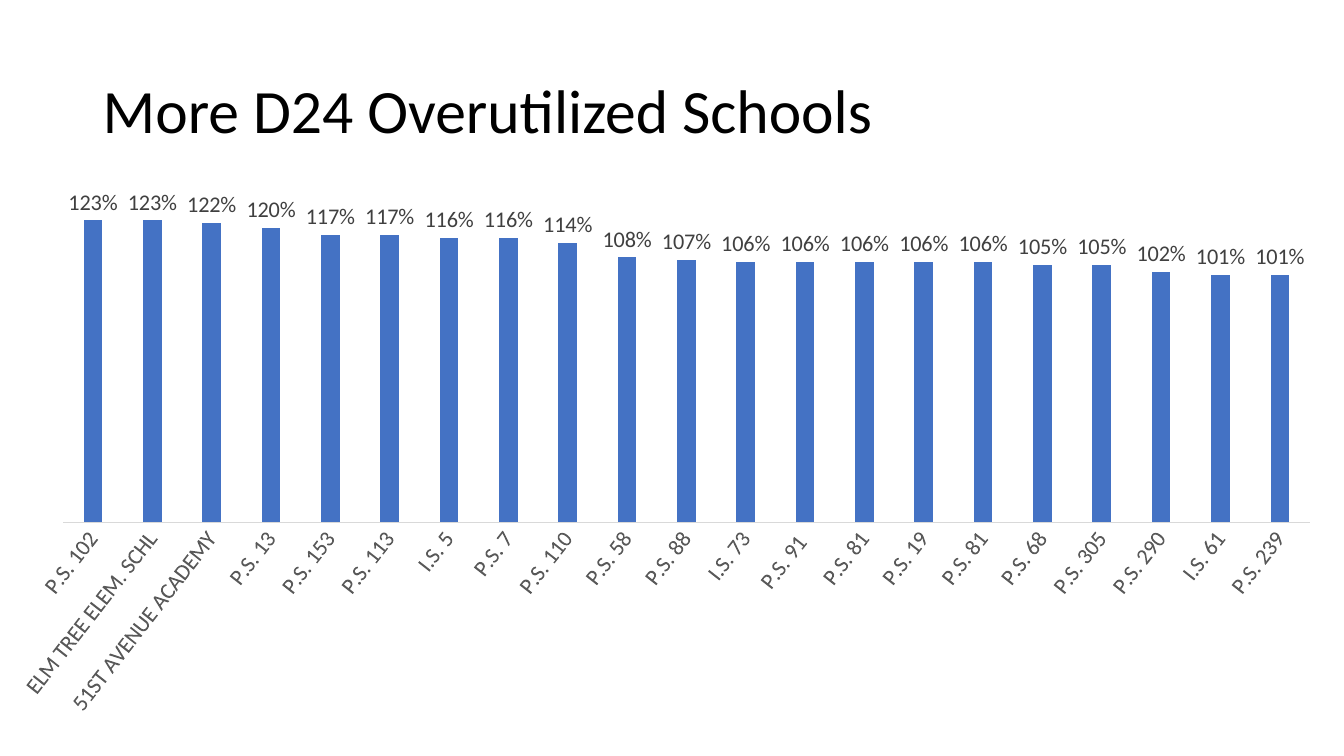
from lxml import etree
from pptx import Presentation
from pptx import util as u
from pptx.chart import data as chart_data
from pptx.dml import color
from pptx.enum import chart as ch, text
from pptx.oxml import ns

BLACK = color.RGBColor(0x00, 0x00, 0x00)
BLUE = color.RGBColor(0x44, 0x72, 0xC4)
LABEL_GRAY = color.RGBColor(0x40, 0x40, 0x40)
AXIS_GRAY = color.RGBColor(0x59, 0x59, 0x59)
LINE_GRAY = color.RGBColor(0xD9, 0xD9, 0xD9)

SCHOOLS = [
    ("P.S. 102", 1.23), ("ELM TREE ELEM. SCHL", 1.23),
    ("51ST AVENUE ACADEMY", 1.22), ("P.S. 13", 1.2), ("P.S. 153", 1.17),
    ("P.S. 113", 1.17), ("I.S. 5", 1.16), ("P.S. 7", 1.16),
    ("P.S. 110", 1.14), ("P.S. 58", 1.08), ("P.S. 88", 1.07),
    ("I.S. 73", 1.06), ("P.S. 91 ", 1.06), ("P.S. 81", 1.06),
    ("P.S. 19", 1.06), ("P.S. 81", 1.06), ("P.S. 68", 1.05),
    ("P.S. 305", 1.05), ("P.S. 290", 1.02), ("I.S. 61", 1.01),
    ("P.S. 239", 1.01),
]
PLOT_AREA = {"layoutTarget": "inner", "xMode": "edge", "yMode": "edge",
             "x": 0.028, "y": 0.029, "w": 0.961, "h": 0.601}
LABEL_ANGLE = -52


class SlideBuilder:
    """Holds the font and the current slide, and adds styled elements."""

    def __init__(self, slide, font="Calibri"):
        self.s = slide
        self.font = font

    def apply(self, target, **formats):
        """Set each given format value on the target."""
        for name, value in formats.items():
            setattr(target, name, value)

    def style(self, font, size, rgb):
        """Give a font the slide's typeface, a size and a colour."""
        self.apply(font, name=self.font, size=u.Pt(size))
        font.color.rgb = rgb

    def title(self, words, box):
        """Add a vertically centred title."""
        tf = self.s.shapes.add_textbox(*map(u.Inches, box)).text_frame
        self.apply(tf, word_wrap=True, vertical_anchor=text.MSO_ANCHOR.MIDDLE)
        p = tf.paragraphs[0]
        p.line_spacing = 0.9
        r = p.add_run()
        r.text = words
        self.style(r.font, 44, BLACK)

    def column_chart(self, rows, box):
        """Add a column chart of percentages with labelled bars."""
        data = chart_data.CategoryChartData(number_format="0%")
        data.categories = [name for name, _ in rows]
        data.add_series("Series 1", [value for _, value in rows])
        chart = self.s.shapes.add_chart(
            ch.XL_CHART_TYPE.COLUMN_CLUSTERED, *map(u.Inches, box), data).chart
        self.apply(chart, has_legend=False, has_title=False)
        self.style(chart.font, 10, BLACK)
        self.bars(chart.plots[0])
        self.axes(chart)
        self.plot_layout(chart)

    def bars(self, plot):
        """Colour the bars and label their ends."""
        self.apply(plot, gap_width=219, overlap=-27, vary_by_categories=False,
                   has_data_labels=True)
        fill = plot.series[0].format.fill
        fill.solid()
        fill.fore_color.rgb = BLUE
        labels = plot.data_labels
        self.apply(labels, show_value=True, number_format="0%",
                   number_format_is_linked=False,
                   position=ch.XL_LABEL_POSITION.OUTSIDE_END)
        self.style(labels.font, 16, LABEL_GRAY)

    def axes(self, chart):
        """Slant the school names and hide the value axis."""
        none = ch.XL_TICK_MARK.NONE
        axis = chart.category_axis
        self.apply(axis, major_tick_mark=none, minor_tick_mark=none,
                   has_major_gridlines=False)
        self.style(axis.tick_labels.font, 16, AXIS_GRAY)
        axis.format.line.color.rgb = LINE_GRAY
        axis.format.line.width = u.Pt(0.75)
        body = axis._element.find(f"{ns.qn('c:txPr')}/{ns.qn('a:bodyPr')}")
        body.set("rot", str(LABEL_ANGLE * 60000))
        body.set("vert", "horz")
        self.apply(chart.value_axis, minimum_scale=0, maximum_scale=1.4,
                   has_major_gridlines=False, visible=False)
        self.apply(chart.value_axis.tick_labels, number_format="0%",
                   number_format_is_linked=False)

    def plot_layout(self, chart):
        """Fix the inner plot area inside the chart."""
        plot_area = chart._chartSpace.chart.plotArea
        for old in plot_area.findall(ns.qn("c:layout")):
            plot_area.remove(old)
        layout = etree.Element(ns.qn("c:layout"))
        manual = etree.SubElement(layout, ns.qn("c:manualLayout"))
        for name, value in PLOT_AREA.items():
            etree.SubElement(manual, ns.qn(f"c:{name}")).set("val", str(value))
        plot_area.insert(0, layout)


def main():
    """Build and save the slide."""
    prs = Presentation()
    prs.slide_width, prs.slide_height = u.Inches(13.33), u.Inches(7.5)
    builder = SlideBuilder(prs.slides.add_slide(prs.slide_layouts[6]))
    builder.title("More D24 Overutilized Schools", (0.92, 0.4, 11.5, 1.45))
    builder.column_chart(SCHOOLS, (0.2, 1.61, 12.93, 5.67))
    prs.save("out.pptx")


if __name__ == "__main__":
    main()
